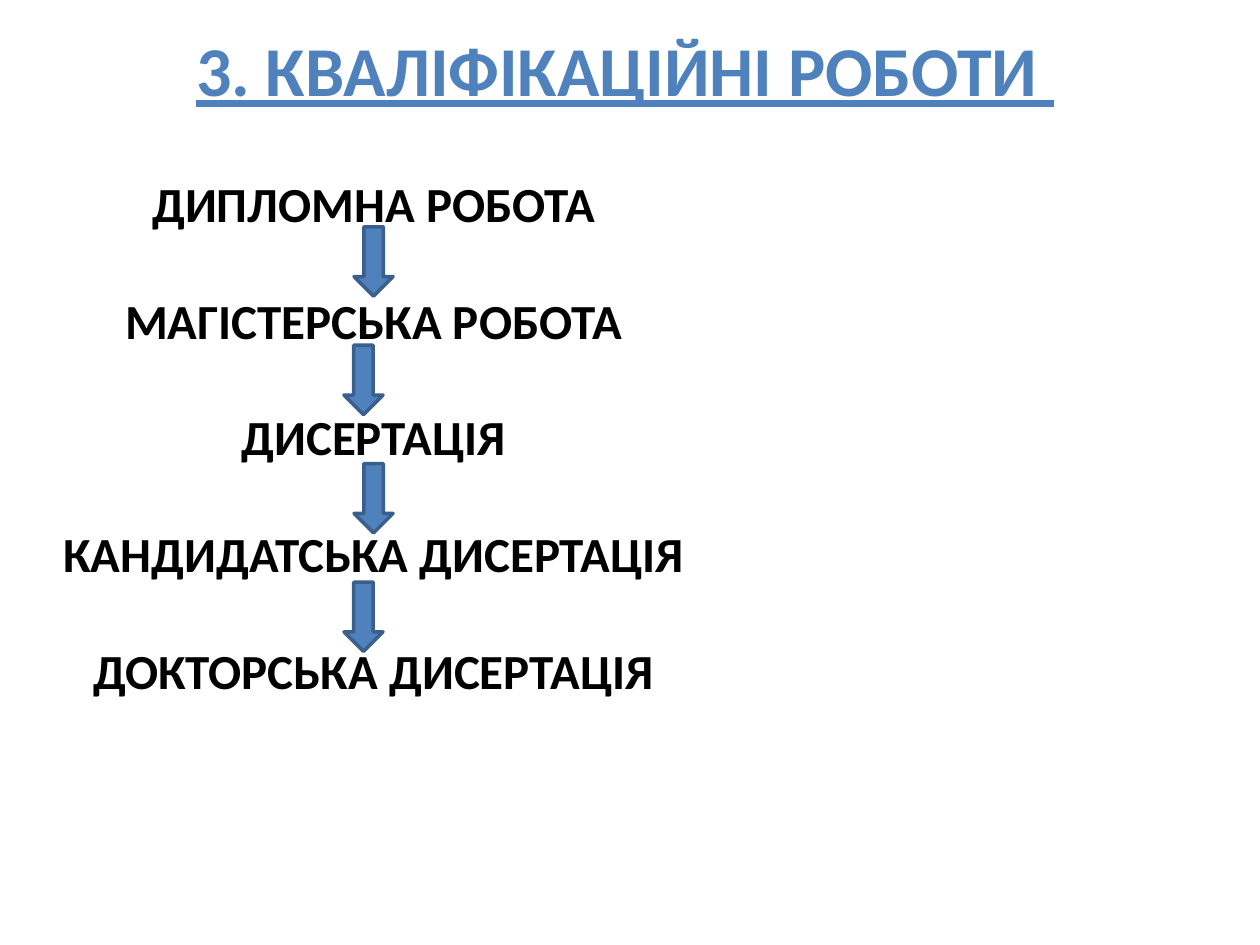
"""Build a slide showing the sequence of qualification works."""
from pptx import Presentation
from pptx.dml.color import RGBColor
from pptx.enum.shapes import MSO_SHAPE
from pptx.enum.text import PP_ALIGN
from pptx.util import Inches, Pt

CENTER = PP_ALIGN.CENTER
DOWN_ARROW = MSO_SHAPE.DOWN_ARROW

TITLE = "3. КВАЛІФІКАЦІЙНІ РОБОТИ "
WORKS = [
    "ДИПЛОМНА РОБОТА",
    "МАГІСТЕРСЬКА РОБОТА",
    "ДИСЕРТАЦІЯ",
    "КАНДИДАТСЬКА ДИСЕРТАЦІЯ",
    "ДОКТОРСЬКА ДИСЕРТАЦІЯ",
]
THEME = {
    "font": "Calibri",
    "accent": RGBColor(0x4F, 0x81, 0xBD),
    "outline": RGBColor(0x3A, 0x5F, 0x8C),
    "text": RGBColor(0, 0, 0),
    "title_size": Pt(40),
    "work_size": Pt(28),
    "work_gap": Pt(33),
    "outline_width": Pt(2),
}
TITLE_AREA = (0.47, 0.16, 8.98, 0.77)
WORKS_AREA = (0.23, 1.33, 5.47, 4.64)
ARROW_LEFTS = (2.81, 2.73)
ARROW_TOP, ARROW_PITCH = 1.8, 0.94
ARROW_WIDTH, ARROW_HEIGHT = 0.31, 0.55


def add_text(page, area, lines, size, color, gap=Pt(0), underline=False):
    box = page.shapes.add_textbox(*map(Inches, area))
    frame = box.text_frame
    frame.word_wrap = True
    for index, line in enumerate(lines):
        para = frame.add_paragraph() if index else frame.paragraphs[0]
        para.alignment = CENTER
        para.space_before = gap if index else Pt(0)
        span = para.add_run()
        span.text = line
        span.font.name = THEME["font"]
        span.font.size = size
        span.font.bold = True
        span.font.underline = underline
        span.font.color.rgb = color


def add_arrow(page, left, top):
    arrow = page.shapes.add_shape(
        DOWN_ARROW, *map(Inches, (left, top, ARROW_WIDTH, ARROW_HEIGHT))
    )
    arrow.shadow.inherit = False
    arrow.fill.solid()
    arrow.fill.fore_color.rgb = THEME["accent"]
    arrow.line.color.rgb = THEME["outline"]
    arrow.line.width = THEME["outline_width"]


def main():
    deck = Presentation()
    deck.slide_width, deck.slide_height = Inches(10), Inches(7.5)
    page = deck.slides.add_slide(deck.slide_layouts[6])
    add_text(page, TITLE_AREA, [TITLE], THEME["title_size"], THEME["accent"], underline=True)
    add_text(page, WORKS_AREA, WORKS, THEME["work_size"], THEME["text"], THEME["work_gap"])
    for index in range(len(WORKS) - 1):
        add_arrow(page, ARROW_LEFTS[index % 2], ARROW_TOP + index * ARROW_PITCH)
    deck.save("out.pptx")


if __name__ == "__main__":
    main()
